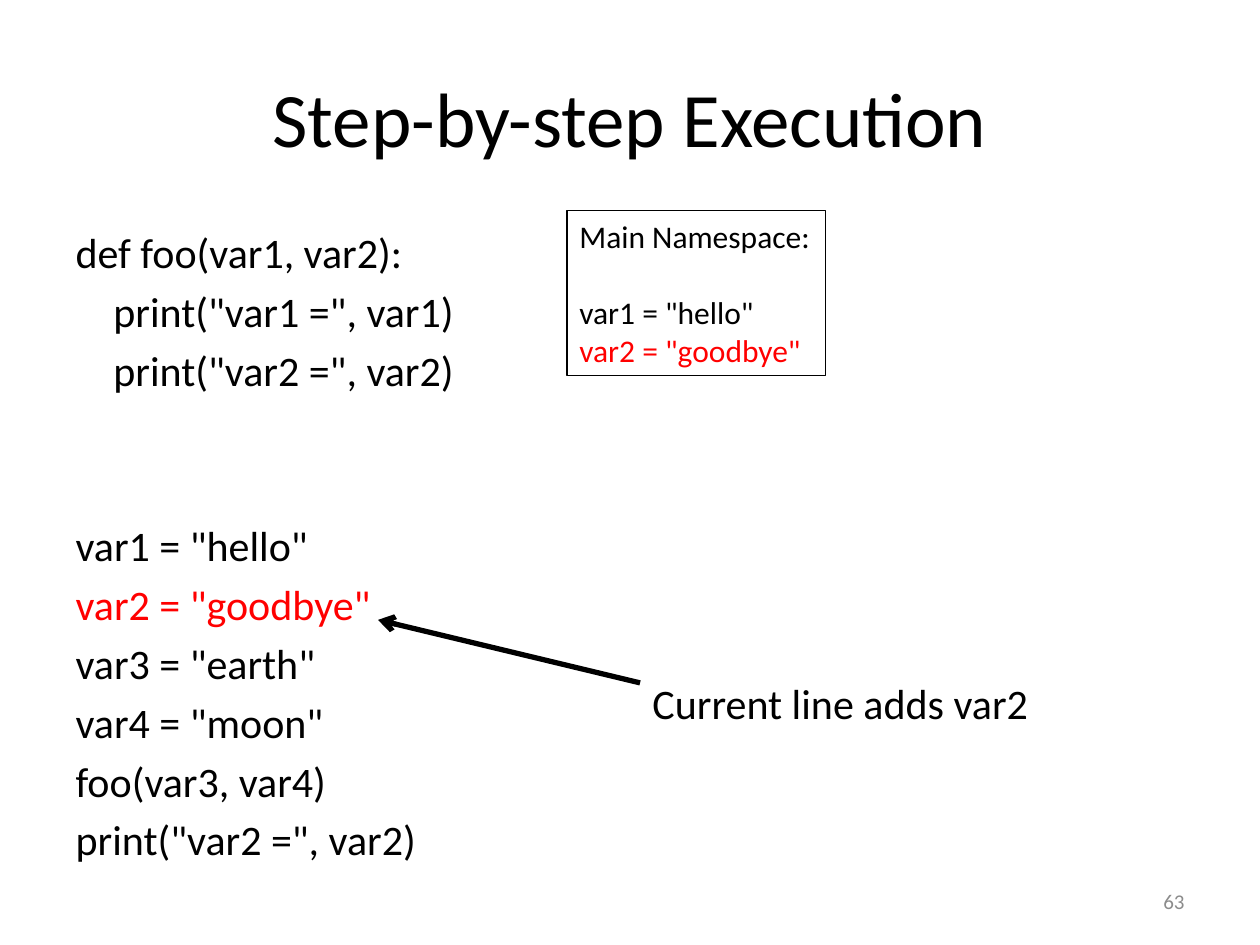
from pptx import Presentation
from pptx.dml.color import RGBColor
from pptx.enum.shapes import MSO_CONNECTOR, MSO_SHAPE
from pptx.enum.text import MSO_ANCHOR, MSO_AUTO_SIZE, PP_ALIGN
from pptx.oxml.ns import qn
from pptx.util import Inches, Pt
from lxml.etree import SubElement

BLACK = RGBColor(0x00, 0x00, 0x00)
RED = RGBColor(0xFF, 0x00, 0x00)
GRAY = RGBColor(0x8C, 0x8C, 0x8C)
FONT = "Calibri"

# Content: text, colour, indent in inches, space before in points (None inherits)
TITLE = "Step-by-step Execution"
CODE = [
    ("def foo(var1, var2):", BLACK, 0, None),
    ('print("var1 =", var1)', BLACK, 0.3, None),
    ('print("var2 =", var2)', BLACK, 0.3, None),
    ('var1 = "hello"', BLACK, 0, 71.5),
    ('var2 = "goodbye"', RED, 0, None),
    ('var3 = "earth"', BLACK, 0, None),
    ('var4 = "moon"', BLACK, 0, None),
    ("foo(var3, var4)", BLACK, 0, None),
    ('print("var2 =", var2)', BLACK, 0, None),
]
NAMES = [
    ("Main Namespace:", BLACK, 0, None),
    ('var1 = "hello"', BLACK, 0, 22),
    ('var2 = "goodbye"', RED, 0, None),
]
NOTE = [("Current line adds var2", BLACK, 0, None)]
PAGE = [("63", GRAY, 0, None)]


def place(shape, left, top, width, height):
    shape.left, shape.top = Inches(left), Inches(top)
    shape.width, shape.height = Inches(width), Inches(height)


def write(frame, lines, size, align=PP_ALIGN.LEFT):
    for i, (text, color, indent, gap) in enumerate(lines):
        para = frame.paragraphs[0] if i == 0 else frame.add_paragraph()
        para.alignment = align
        if gap is not None:
            para.space_before = Pt(gap)
        props = para._p.get_or_add_pPr()
        props.set("marL", str(Inches(indent)))
        props.set("indent", "0")
        SubElement(props, qn("a:buNone"))
        run = para.add_run()
        run.text = text
        run.font.name, run.font.size = FONT, Pt(size)
        run.font.color.rgb = color


deck = Presentation()
deck.slide_width, deck.slide_height = Inches(10), Inches(7.5)
slide = deck.slides.add_slide(deck.slide_layouts[1])
shapes = slide.shapes

# Title and code
title, body = slide.placeholders
place(title, 0.5, 0.3, 9, 1.25)
write(title.text_frame, [(TITLE, BLACK, 0, None)], 44, PP_ALIGN.CENTER)
place(body, 0.5, 1.75, 9, 4.95)
body.text_frame.auto_size = MSO_AUTO_SIZE.NONE
write(body.text_frame, CODE, 24)

# Page number
page = shapes.add_textbox(Inches(7.17), Inches(6.95), Inches(2.33), Inches(0.4))
page.text_frame.word_wrap = True
page.text_frame.vertical_anchor = MSO_ANCHOR.MIDDLE
write(page.text_frame, PAGE, 12, PP_ALIGN.RIGHT)

# Note on the current line
note = shapes.add_textbox(Inches(5.08), Inches(5.33), Inches(3.21), Inches(0.5))
note.text_frame.word_wrap = False
note.text_frame.auto_size = MSO_AUTO_SIZE.SHAPE_TO_FIT_TEXT
write(note.text_frame, NOTE, 24)

# Namespace box
box = shapes.add_shape(MSO_SHAPE.RECTANGLE, Inches(4.5), Inches(1.67),
                       Inches(2.05), Inches(1.31))
box.shadow.inherit = False
box.fill.background()
box.line.color.rgb, box.line.width = BLACK, Pt(0.75)
box.text_frame.word_wrap = True
box.text_frame.vertical_anchor = MSO_ANCHOR.TOP
box.text_frame.auto_size = MSO_AUTO_SIZE.SHAPE_TO_FIT_TEXT
write(box.text_frame, NAMES, 18)

# Arrow from the note to the current line
arrow = shapes.add_connector(MSO_CONNECTOR.STRAIGHT, Inches(5.08), Inches(5.42),
                             Inches(3), Inches(4.92))
arrow.line.color.rgb, arrow.line.width = BLACK, Pt(3)
SubElement(arrow.line._get_or_add_ln(), qn("a:tailEnd"), type="arrow")
SubElement(arrow._element.spPr, qn("a:effectLst"))

deck.save("out.pptx")
